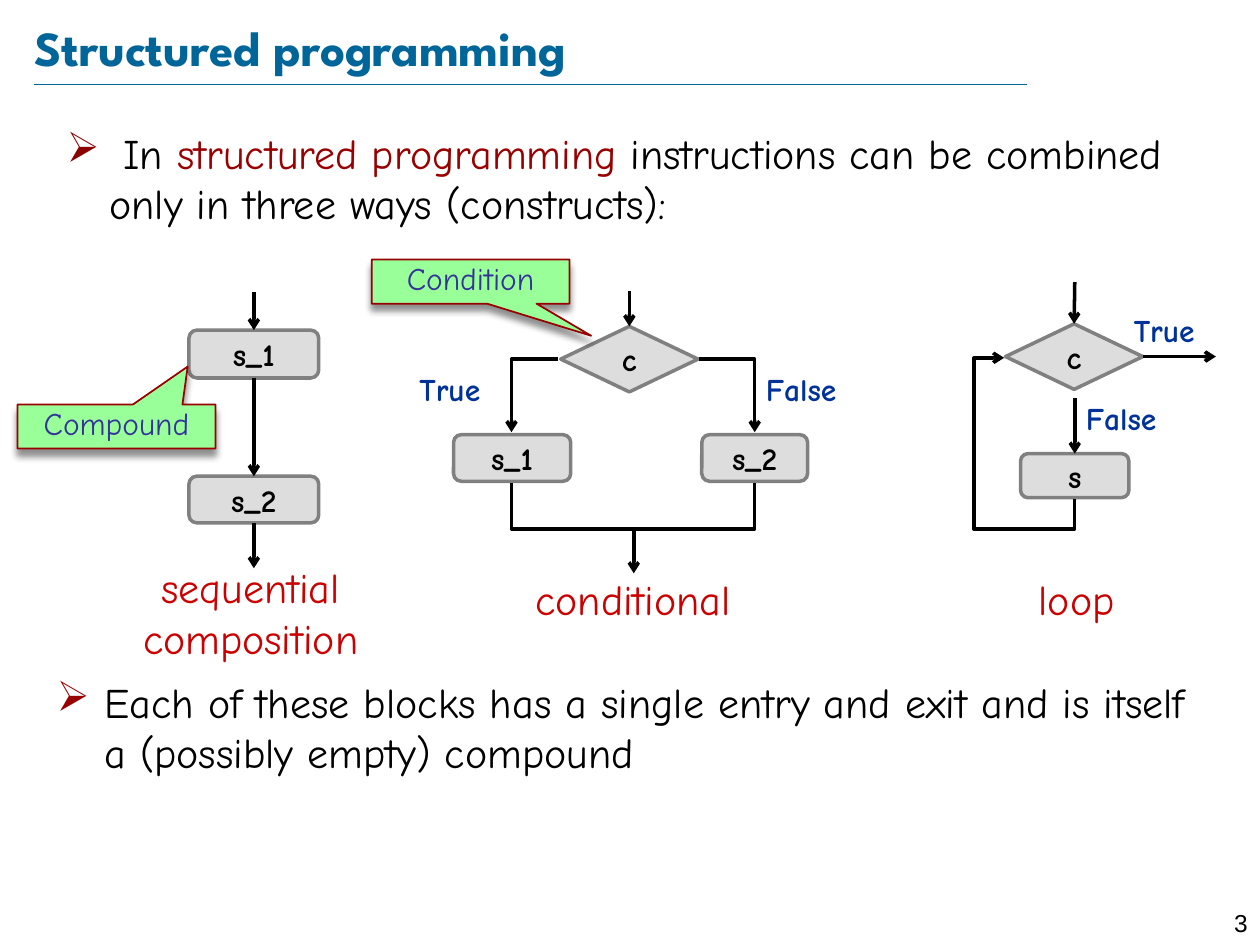
from collections import namedtuple
from lxml import etree
from pptx import Presentation
from pptx import util as u
from pptx.dml.color import RGBColor
from pptx.enum import shapes, text
from pptx.oxml.ns import qn

COLS, ROWS = 100, 75
WIDTH, HEIGHT = u.Inches(10), u.Inches(7.5)
BODY, HEADING, NUMBER = "Comic Neue", "League Spartan", "Arial"
COLOURS = {
    "title": "006699", "text": "000000", "term": "990000", "bullet": "8B0000",
    "caption": "CC0000", "branch": "003399", "node": "DDDDDD", "node_edge": "808080",
    "note": "99FF99", "note_edge": "990000", "note_text": "333399", "flow": "000000",
}
CENTRE, RIGHT = text.PP_ALIGN.CENTER, text.PP_ALIGN.RIGHT
PRESET = shapes.MSO_SHAPE
TOP, BOTTOM, RIGHT_SIDE = 0, 2, 3

Box = namedtuple("Box", "col row cols rows")


def colour(name):
    return RGBColor.from_string(COLOURS[name])


def x(cols):
    return int(WIDTH * cols / COLS)


def y(rows):
    return int(HEIGHT * rows / ROWS)


def inside(box, col, row, cols, rows):
    return Box(box.col + col, box.row + row, cols, rows)


def extent(box):
    return x(box.col), y(box.row), x(box.cols), y(box.rows)


def write(paragraph, runs, size, face=BODY, bold=False, align=None):
    paragraph.alignment = align
    for words, tint in runs:
        run = paragraph.add_run()
        run.text = words
        run.font.size = u.Pt(size)
        run.font.name = face
        run.font.bold = bold
        run.font.color.rgb = colour(tint)


def add_words(slide, box, runs, size, wrap=True, **style):
    frame = slide.shapes.add_textbox(*extent(box)).text_frame
    frame.word_wrap = wrap
    write(frame.paragraphs[0], runs, size, **style)
    return frame


def add_bullet(paragraph, tint, margin, hanging):
    props = paragraph._p.get_or_add_pPr()
    props.set("marL", str(x(margin)))
    props.set("indent", str(-x(hanging)))
    tint_node = etree.SubElement(props, qn("a:buClr"))
    etree.SubElement(tint_node, qn("a:srgbClr"), val=COLOURS[tint])
    etree.SubElement(props, qn("a:buChar"), char="➢")


def add_point(slide, box, runs, tint, margin, hanging):
    point = add_words(slide, box, [], 24).paragraphs[0]
    add_bullet(point, tint, margin, hanging)
    write(point, runs, 24)


def add_filled(slide, preset, box, fill, edge, weight):
    part = slide.shapes.add_shape(preset, *extent(box))
    part.fill.solid()
    part.fill.fore_color.rgb = colour(fill)
    part.line.color.rgb = colour(edge)
    part.line.width = u.Pt(weight)
    part.shadow.inherit = False
    part.text_frame.vertical_anchor = text.MSO_ANCHOR.MIDDLE
    return part


def add_node(slide, box, label, preset=PRESET.ROUNDED_RECTANGLE):
    node = add_filled(slide, preset, box, "node", "node_edge", 2)
    write(node.text_frame.paragraphs[0], [(label, "text")], 18, bold=True, align=CENTRE)
    return node


def add_note(slide, box, label, pointer):
    note = add_filled(slide, PRESET.RECTANGULAR_CALLOUT, box, "note", "note_edge", 1)
    note.adjustments[0], note.adjustments[1] = pointer
    frame = note.text_frame
    frame.margin_left = frame.margin_right = 0
    write(frame.paragraphs[0], [(label, "note_text")], 18, align=CENTRE)
    frame.paragraphs[0].line_spacing = 0.8
    effects = note._element.spPr.find(qn("a:effectLst"))
    shade = etree.SubElement(effects, qn("a:outerShdw"), blurRad=str(u.Pt(4)),
                             dist=str(u.Pt(4)), dir="5400000", rotWithShape="0")
    tint = etree.SubElement(shade, qn("a:srgbClr"), val=COLOURS["flow"])
    etree.SubElement(tint, qn("a:alpha"), val="43000")


def style_flow(flow, arrow):
    flow.line.color.rgb = colour("flow")
    flow.line.width = u.Pt(2)
    if arrow:
        etree.SubElement(flow.line._get_or_add_ln(), qn("a:tailEnd"), type="arrow")


def add_line(slide, start, end):
    line = slide.shapes.add_connector(shapes.MSO_CONNECTOR.STRAIGHT,
                                      x(start[0]), y(start[1]), x(end[0]), y(end[1]))
    etree.SubElement(line._element.spPr, qn("a:effectLst"))
    return line


def add_arrow(slide, box, start, end, source=None, target=None):
    places = [(box.col + col, box.row + row) for col, row in (start, end)]
    arrow = add_line(slide, *places)
    if source:
        arrow.begin_connect(*source)
    if target:
        arrow.end_connect(*target)
    style_flow(arrow, True)


def add_bent(slide, box, corners, arrow=True):
    start, *others = [(x(box.col + col), y(box.row + row)) for col, row in corners]
    outline = slide.shapes.build_freeform(*start)
    outline.add_line_segments(others, close=False)
    route = outline.convert_to_shape()
    route.fill.background()
    route.shadow.inherit = False
    style_flow(route, arrow)


def add_branch(slide, box, col, row, label):
    add_words(slide, inside(box, col, row, 10, 4), [(label, "branch")], 18, bold=True)


def add_caption(slide, box, *lines):
    caption = add_words(slide, box, [], 24, wrap=False).paragraphs[0]
    for index, line in enumerate(lines):
        if index:
            caption.add_line_break()
        write(caption, [(line, "caption")], 24, align=CENTRE)


def draw_header(slide, box):
    rule = add_line(slide, (box.col, box.row + 5.4), (box.col + 78.8, box.row + 5.4))
    rule.line.color.rgb = colour("title")
    rule.line.width = u.Pt(0.25)
    title = add_words(slide, inside(box, 0, 0, box.cols, 4.8),
                      [("Structured programming", "title")], 28, face=HEADING, bold=True)
    title.margin_left = title.margin_right = title.margin_top = title.margin_bottom = 0
    title.vertical_anchor = text.MSO_ANCHOR.MIDDLE


def draw_sequence(slide, box):
    axis = 20.15
    first = add_node(slide, inside(box, 15, 6.2, 10.3, 3.8), "s_1")
    second = add_node(slide, inside(box, 15, 17.8, 10.3, 3.7), "s_2")
    add_arrow(slide, box, (axis, 3.2), (axis, 6.2), target=(first, TOP))
    add_arrow(slide, box, (axis, 10), (axis, 17.8), (first, BOTTOM), (second, TOP))
    add_arrow(slide, box, (axis, 21.5), (axis, 25.1), source=(second, BOTTOM))
    add_caption(slide, inside(box, 9.7, 24.1, 20.4, 9.1), "sequential", "composition")
    add_note(slide, inside(box, 1.4, 12.1, 15.7, 3.5), "Compound", (0.36, -1.36))


def draw_conditional(slide, box):
    axis, left, right = 21.95, 12.6, 31.9
    test = add_node(slide, inside(box, 16.5, 5.9, 10.9, 5.2), "c", PRESET.FLOWCHART_DECISION)
    add_node(slide, inside(box, 8, 14.5, 9.3, 3.7), "s_1")
    add_node(slide, inside(box, 27.7, 14.5, 8.4, 3.7), "s_2")
    add_arrow(slide, box, (axis, 3.1), (axis, 5.9), target=(test, TOP))
    for start, end in ((16.3, left), (27.5, right)):
        add_bent(slide, box, [(start, 8.5), (end, 8.5), (end, 14.3)])
    add_bent(slide, box, [(left, 18.3), (left, 22), (right, 22), (right, 18.3)], arrow=False)
    add_arrow(slide, box, (22.3, 22.1), (22.3, 25.5))
    add_branch(slide, box, 4.3, 8.9, "True")
    add_branch(slide, box, 31.8, 8.9, "False")
    add_caption(slide, inside(box, 12.8, 25, 18.9, 5), "conditional")
    add_note(slide, inside(box, 1.5, 0.6, 15.7, 3.5), "Condition", (0.61, 1.23))


def draw_loop(slide, box):
    axis = 9.3
    test = add_node(slide, inside(box, 3.8, 5.7, 10.9, 5.2), "c", PRESET.FLOWCHART_DECISION)
    body = add_node(slide, inside(box, 5, 16, 8.6, 3.5), "s")
    add_arrow(slide, box, (axis, 2.4), (axis, 5.7), target=(test, TOP))
    add_arrow(slide, box, (axis, 11.6), (axis, 16), target=(body, TOP))
    add_arrow(slide, box, (14.7, 8.3), (20.5, 8.3), source=(test, RIGHT_SIDE))
    add_bent(slide, box, [(axis, 19.6), (axis, 22), (1.3, 22), (1.3, 8.4), (3.7, 8.4)])
    add_branch(slide, box, 9.2, 11.2, "False")
    add_branch(slide, box, 13, 4.2, "True")
    add_caption(slide, inside(box, 5.3, 25, 8.3, 5), "loop")


def main():
    deck = Presentation()
    deck.slide_width, deck.slide_height = WIDTH, HEIGHT
    slide = deck.slides.add_slide(deck.slide_layouts[6])
    draw_header(slide, Box(2.7, 1.3, 86.9, 5.4))
    add_point(slide, Box(3, 9.6, 94.9, 19.2),
              [(" In ", "text"), ("structured programming", "term"),
               (" instructions can be combined only in three ways (constructs):", "text")],
              "bullet", 4.7, 3.4)
    draw_sequence(slide, Box(0, 20, 30, 33))
    draw_conditional(slide, Box(28, 20, 42, 30))
    draw_loop(slide, Box(76, 20, 23, 30))
    add_point(slide, Box(3.5, 53.2, 92.1, 9.7),
              [("Each of these blocks has a single entry and exit and is itself "
                "a (possibly empty) compound", "text")], "term", 3.8, 3.8)
    add_words(slide, Box(94.5, 71.6, 5.5, 2.4), [("3", "text")], 14, face=NUMBER, align=RIGHT)
    deck.save("out.pptx")


if __name__ == "__main__":
    main()
